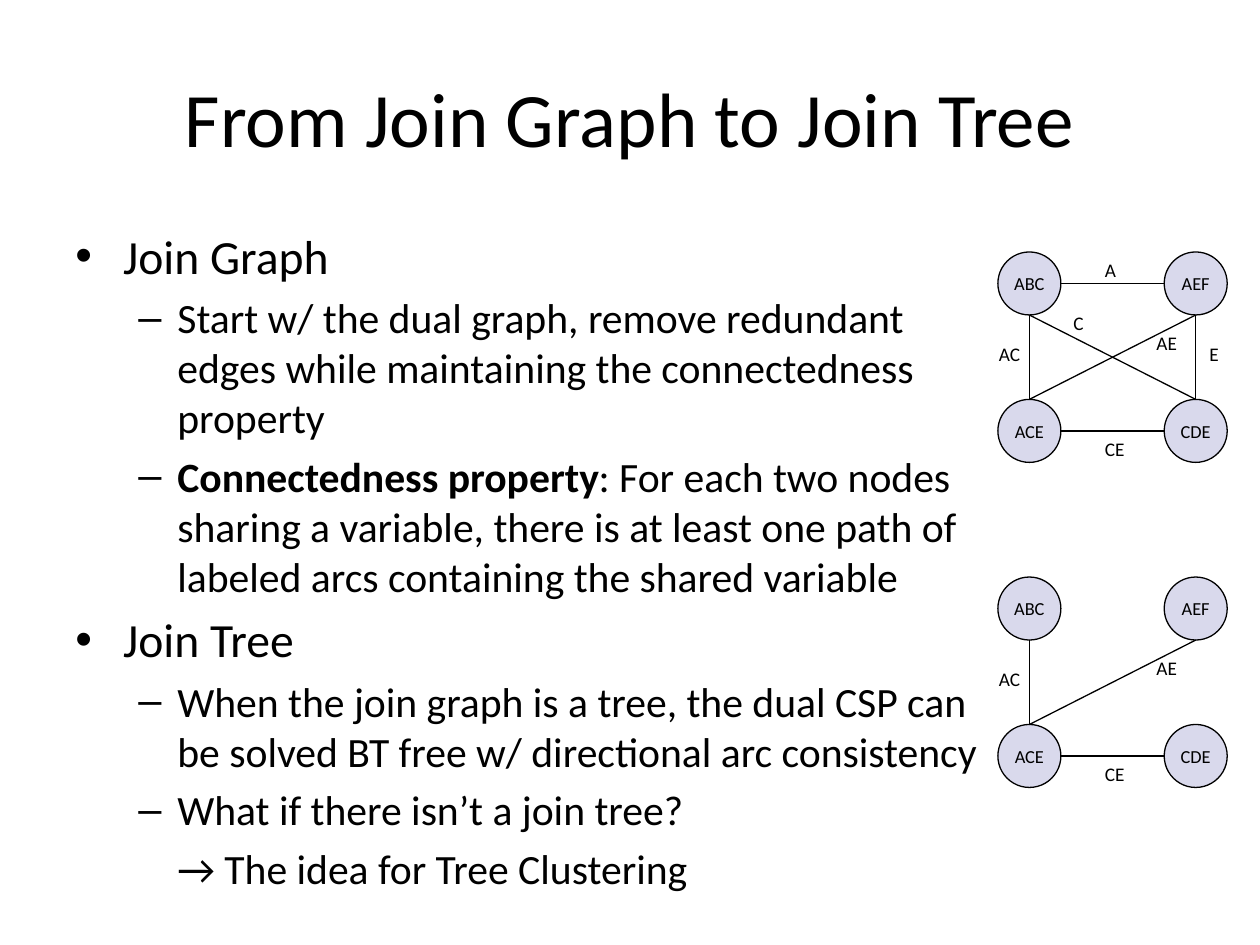
from lxml import etree
from pptx import Presentation
from pptx import util as u
from pptx.dml.color import RGBColor
from pptx.enum import shapes, text
from pptx.oxml import ns

BLACK = RGBColor(0, 0, 0)
NAVY = RGBColor(0, 0, 0x80)
TOP, LEFT, BOTTOM, RIGHT = range(4)


class Deck:
    font = "Calibri"
    line = u.Pt(0.75)
    size = 0.5

    def __init__(self):
        self.show = Presentation()
        self.show.slide_width = u.Inches(10)
        self.show.slide_height = u.Inches(7.5)
        self.slide = self.show.slides.add_slide(self.show.slide_layouts[6])

    def style(self, para, size, align=text.PP_ALIGN.LEFT):
        para.alignment = align
        para.font.name = self.font
        para.font.size = u.Pt(size)
        para.font.color.rgb = BLACK

    def box(self, x, y, w, h, wrap=True):
        box = self.slide.shapes.add_textbox(*map(u.Inches, (x, y, w, h)))
        box.text_frame.word_wrap = wrap
        return box.text_frame

    def title(self, words):
        frame = self.box(0.5, 0.3, 9, 1.25)
        frame.vertical_anchor = text.MSO_ANCHOR.MIDDLE
        frame.text = words
        self.style(frame.paragraphs[0], 44, text.PP_ALIGN.CENTER)

    def body(self, items):
        frame = self.box(0.5, 1.75, 7.5, 4.95)
        for i, (level, mark, bold, words) in enumerate(items):
            para = frame.paragraphs[0] if i == 0 else frame.add_paragraph()
            size, left, hang = ((27.2, 0.38, 0.38), (23.8, 0.81, 0.31))[level]
            para.level = level
            para.space_before = u.Pt(round(size * 0.2, 1))
            self.style(para, size)
            if bold:
                run = para.add_run()
                run.text = bold
                run.font.bold = True
            para.add_run().text = words
            props = para._p.get_or_add_pPr()
            props.set("marL", str(u.Inches(left)))
            props.set("indent", str(-u.Inches(hang) if mark else 0))
            if mark:
                font = etree.Element(ns.qn("a:buFont"), typeface="Arial")
                sign = etree.Element(ns.qn("a:buChar"), char=mark)
                props.find(ns.qn("a:spcBef")).addnext(font)
                font.addnext(sign)

    def node(self, name, x, y):
        node = self.slide.shapes.add_shape(
            shapes.MSO_SHAPE.ROUNDED_RECTANGLE,
            *map(u.Inches, (x, y, self.size, self.size)))
        node.adjustments[0] = 0.5
        node.shadow.inherit = False
        node.fill.solid()
        node.fill.fore_color.rgb = NAVY
        tint = node._element.spPr.find(".//" + ns.qn("a:srgbClr"))
        etree.SubElement(tint, ns.qn("a:alpha"), val="15000")
        node.line.color.rgb = BLACK
        node.line.width = self.line
        frame = node.text_frame
        frame.word_wrap = False
        frame.vertical_anchor = text.MSO_ANCHOR.MIDDLE
        frame.text = name
        self.style(frame.paragraphs[0], 10.5, text.PP_ALIGN.CENTER)
        return node

    def edge(self, start, out, end, into):
        edge = self.slide.shapes.add_connector(
            shapes.MSO_CONNECTOR.STRAIGHT, 0, 0, 0, 0)
        edge.begin_connect(start, out)
        edge.end_connect(end, into)
        edge.line.color.rgb = BLACK
        edge.line.width = self.line
        etree.SubElement(edge._element.spPr, ns.qn("a:effectLst"))

    def label(self, words, x, y):
        frame = self.box(x, y, 0.29 if len(words) == 1 else 0.37, 0.29, False)
        frame.auto_size = text.MSO_AUTO_SIZE.SHAPE_TO_FIT_TEXT
        frame.text = words
        self.style(frame.paragraphs[0], 11)

    def graph(self, top, names):
        nodes = {name: self.node(name, x, top + y)
                 for name, x, y in NODES}
        for name in names:
            start, out, end, into, x, y = EDGES[name]
            self.edge(nodes[start], out, nodes[end], into)
        for name in names:
            x, y = EDGES[name][4:]
            self.label(name, x, top + y)


NODES = [("ACE", 7.92, 1.17), ("CDE", 9.24, 1.17),
         ("AEF", 9.24, 0), ("ABC", 7.92, 0)]
EDGES = {
    "A": ("AEF", LEFT, "ABC", RIGHT, 8.67, 0),
    "AC": ("ACE", TOP, "ABC", BOTTOM, 7.83, 0.67),
    "CE": ("ACE", RIGHT, "CDE", LEFT, 8.67, 1.42),
    "E": ("CDE", TOP, "AEF", BOTTOM, 9.5, 0.67),
    "AE": ("ACE", TOP, "AEF", BOTTOM, 9.08, 0.58),
    "C": ("ABC", BOTTOM, "CDE", TOP, 8.42, 0.42),
}
ITEMS = [
    (0, "•", "", "Join Graph"),
    (1, "–", "", "Start w/ the dual graph, remove redundant edges while "
     "maintaining the connectedness property"),
    (1, "–", "Connectedness property", ": For each two nodes sharing a "
     "variable, there is at least one path of labeled arcs containing "
     "the shared variable"),
    (0, "•", "", "Join Tree"),
    (1, "–", "", "When the join graph is a tree, the dual CSP can be solved "
     "BT free w/ directional arc consistency"),
    (1, "–", "", "What if there isn’t a join tree?"),
    (1, "", "", "→ The idea for Tree Clustering"),
]


def main():
    deck = Deck()
    deck.title("From Join Graph to Join Tree")
    deck.body(ITEMS)
    deck.graph(2, EDGES)
    deck.graph(4.58, ["AC", "CE", "AE"])
    deck.show.save("out.pptx")


if __name__ == "__main__":
    main()
